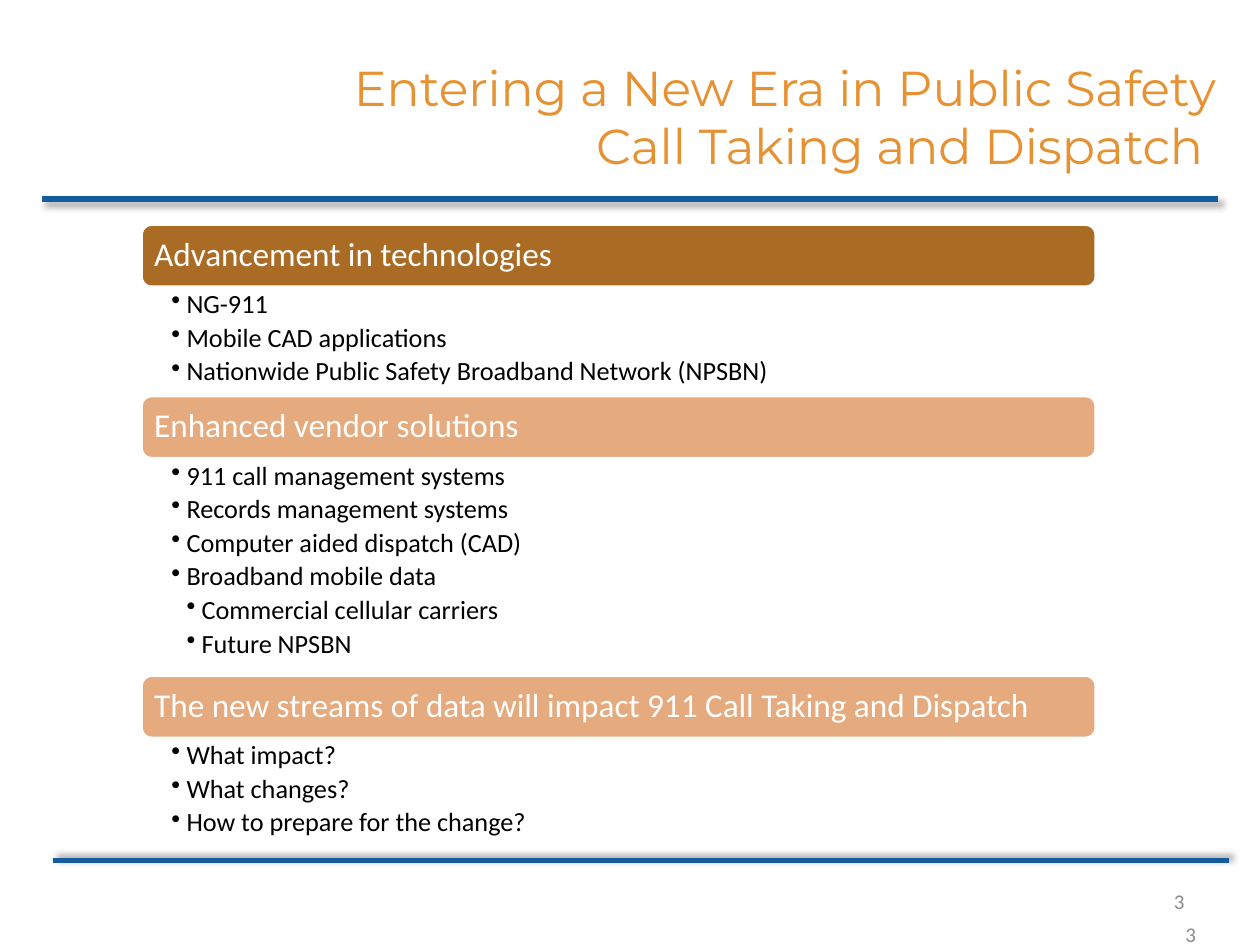
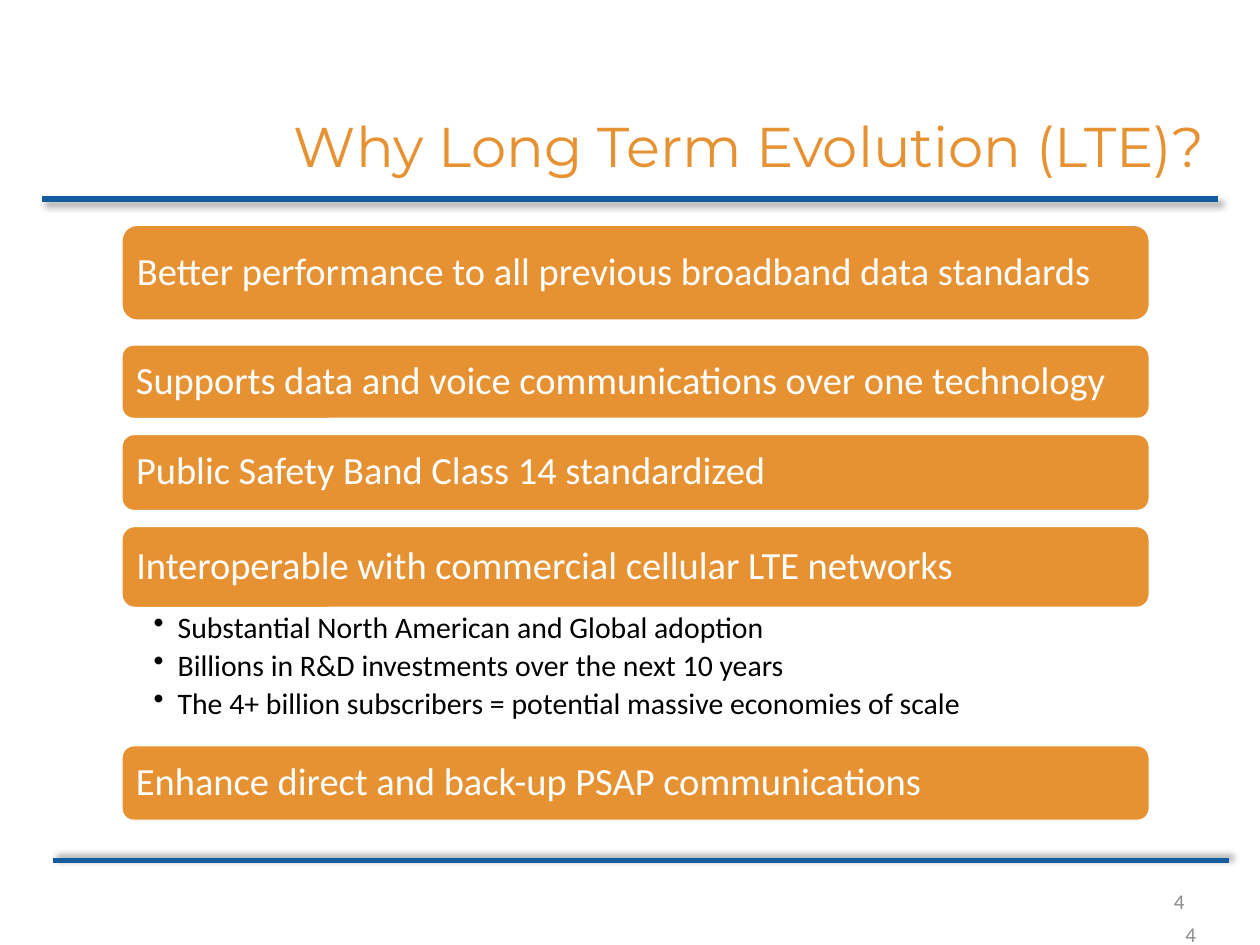
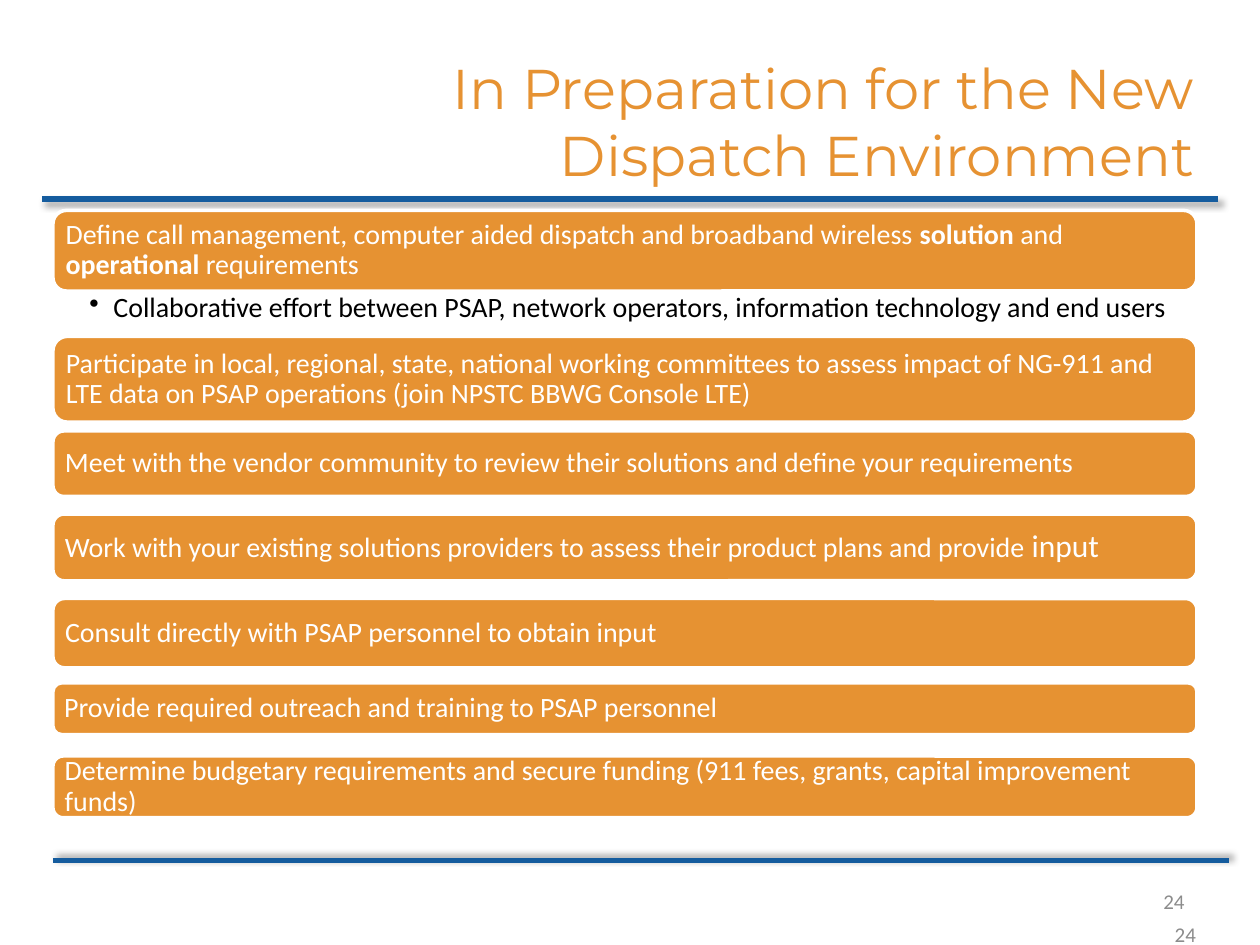
"""Build three slides on new technology in public safety dispatch."""
from lxml import etree
from pptx import Presentation
from pptx.dml.color import RGBColor
from pptx.enum.shapes import MSO_CONNECTOR, MSO_SHAPE
from pptx.enum.text import MSO_ANCHOR, MSO_AUTO_SIZE, PP_ALIGN
from pptx.oxml.ns import qn
from pptx.util import Inches, Pt

STRAIGHT, ROUNDED = MSO_CONNECTOR.STRAIGHT, MSO_SHAPE.ROUNDED_RECTANGLE
TOP, MIDDLE = MSO_ANCHOR.TOP, MSO_ANCHOR.MIDDLE
LEFT, RIGHT = PP_ALIGN.LEFT, PP_ALIGN.RIGHT
NO_FIT = MSO_AUTO_SIZE.NONE
TITLE_ONLY = 5

ORANGE, BROWN, PEACH = "E69232", "AA6C25", "E5AA7E"
BLUE, GRAY, WHITE, BLACK = "155C9E", "8C8C8C", "FFFFFF", "000000"
TITLE_FONT, BODY_FONT = "Montserrat", "Calibri"

RULES = [(9.67, 0.33, 1.58, 45), (9.75, 0.42, 6.83, 315)]
NUMBER_BOXES = [(7.17, 6.95, 2.33, 0.4), (8.67, 7.33, 0.92, 0.17)]
CORNER_INSET = 0.05
BOLD = {"bold": True}

SLIDES = [
    {
        "title": "Entering a New Era in Public Safety Call Taking and Dispatch ",
        "title_box": (2.33, 0.67, 7.42, 0.5), "title_size": 28, "number": "3",
        "left": 1.12, "width": 7.58, "size": 19, "inset": 0.08,
        "bullet_size": 15, "bullet_insets": (0.24, 0.03, 0.15, 0.03),
        "hanging": 0.12, "bullet_row": 0.29,
        "bars": [
            (1.78, 0.5, BROWN, "Advancement in technologies",
             [("NG-911", 1), ("Mobile CAD applications", 1),
              ("Nationwide Public Safety Broadband Network (NPSBN)", 1)]),
            (3.14, 0.5, PEACH, "Enhanced vendor solutions",
             [("911 call management systems", 1),
              ("Records management systems", 1),
              ("Computer aided dispatch (CAD)", 1),
              ("Broadband mobile data", 1),
              ("Commercial cellular carriers", 2),
              ("Future NPSBN", 2)]),
            (5.36, 0.5, PEACH,
             "The new streams of data will impact 911 Call Taking and Dispatch",
             [("What impact?", 1), ("What changes?", 1),
              ("How to prepare for the change?", 1)]),
        ],
    },
    {
        "title": "Why Long Term Evolution (LTE)?",
        "title_box": (1.33, 0.75, 8.33, 0.8), "title_size": 32, "number": "4",
        "left": 0.96, "width": 8.17, "size": 22, "inset": 0.09,
        "bullet_size": 17, "bullet_insets": (0.26, 0.03, 0.17, 0.03),
        "hanging": 0.19, "bullet_row": 0.36,
        "bars": [
            (1.78, 0.77, ORANGE,
             "Better performance to all previous broadband data standards", []),
            (2.73, 0.6, ORANGE,
             "Supports data and voice communications over one technology", []),
            (3.44, 0.62, ORANGE, "Public Safety Band Class 14 standardized", []),
            (4.17, 0.66, ORANGE,
             "Interoperable with commercial cellular LTE networks",
             [("Substantial North American and Global adoption", 1),
              ("Billions in R&D investments over the next 10 years", 1),
              ("The 4+ billion subscribers = potential massive economies of scale", 1)]),
            (5.91, 0.61, ORANGE, "Enhance direct and back-up PSAP communications", []),
        ],
    },
    {
        "title": "In Preparation for the New Dispatch Environment",
        "title_box": (2.08, 0.33, 7.5, 1.25), "title_size": 32, "number": "24",
        "left": 0.42, "width": 9.08, "size": 16, "inset": 0.07,
        "bullet_size": 16, "bullet_insets": (0.29, 0.02, 0.12, 0.02),
        "hanging": 0.19, "bullet_row": 0.54,
        "bars": [
            (1.67, 0.64, ORANGE,
             [("Define call management, computer aided dispatch and broadband wireless ", {}),
              ("solution", BOLD), (" and ", {}),
              ("operational", BOLD), (" requirements", {})],
             [("Collaborative effort between PSAP, network operators, "
               "information technology and end users", 1)]),
            (2.67, 0.68, ORANGE,
             "Participate in local, regional, state, national working committees to assess "
             "impact of NG-911 and LTE data on PSAP operations (join NPSTC BBWG Console LTE)", []),
            (3.42, 0.52, ORANGE,
             "Meet with the vendor community to review their solutions "
             "and define your requirements", []),
            (4.08, 0.53, ORANGE,
             [("Work with your existing solutions providers to assess their "
               "product plans and provide ", {}), ("input", {"size": 18})], []),
            (4.75, 0.55, ORANGE, "Consult directly with PSAP personnel to obtain input", []),
            (5.42, 0.41, ORANGE, "Provide required outreach and training to PSAP personnel", []),
            (6.0, 0.49, ORANGE,
             "Determine budgetary requirements and secure funding "
             "(911 fees, grants, capital improvement funds)", []),
        ],
    },
]


def color(hex_code):
    """Return the colour for a hex string."""
    return RGBColor.from_string(hex_code)


def place(shape, box):
    """Move a shape to a box given in inches."""
    shape.left, shape.top, shape.width, shape.height = map(Inches, box)


def add_bullet(para, level, hanging):
    """Give a paragraph a hanging round bullet."""
    para.level = level
    properties = para._p.get_or_add_pPr()
    properties.set("marL", str(Inches(hanging * level)))
    properties.set("indent", str(-Inches(hanging)))
    etree.SubElement(properties, qn("a:buChar")).set("char", "•")


def write_text(shape, paragraphs, *, size, ink, font=BODY_FONT, align=LEFT, anchor=MIDDLE,
               insets=(0.1, 0.05, 0.1, 0.05), spacing=None, after=None, hanging=None):
    """Fill a shape with (text or spans, level) paragraphs."""
    frame = shape.text_frame
    frame.word_wrap, frame.auto_size, frame.vertical_anchor = True, NO_FIT, anchor
    (frame.margin_left, frame.margin_top,
     frame.margin_right, frame.margin_bottom) = map(Inches, insets)
    for index, (content, level) in enumerate(paragraphs):
        para = frame.add_paragraph() if index else frame.paragraphs[0]
        para.alignment, para.line_spacing, para.space_after = align, spacing, after
        if hanging:
            add_bullet(para, level, hanging)
        for text, changes in [(content, {})] if isinstance(content, str) else content:
            span = para.add_run()
            span.text = text
            span.font.name = font
            span.font.size = Pt(changes.get("size", size))
            span.font.bold = changes.get("bold")
            span.font.color.rgb = color(ink)


def add_rule(page, start, end, height, angle):
    """Draw a blue line with a soft shadow."""
    rule = page.shapes.add_connector(
        STRAIGHT, Inches(start), Inches(height), Inches(end), Inches(height))
    rule.line.color.rgb, rule.line.width = color(BLUE), Pt(3)
    effects = etree.SubElement(rule._element.spPr, qn("a:effectLst"))
    shadow = etree.SubElement(effects, qn("a:outerShdw"), blurRad=str(Pt(4)),
                              dist=str(Pt(3)), dir=str(angle * 60000))
    tint = etree.SubElement(shadow, qn("a:srgbClr"), val=BLACK)
    etree.SubElement(tint, qn("a:alpha"), val="40000")


def add_frame(page, content):
    """Add the title, the two rules and the page numbers."""
    title = page.shapes.title
    place(title, content["title_box"])
    write_text(title, [(content["title"], 0)], size=content["title_size"],
               ink=ORANGE, font=TITLE_FONT, align=RIGHT)
    for rule in RULES:
        add_rule(page, *rule)
    for box in NUMBER_BOXES:
        number = page.shapes.add_textbox(*map(Inches, box))
        write_text(number, [(content["number"], 0)], size=12, ink=GRAY, align=RIGHT)


def add_bar(page, content, top, height, fill, heading, bullets):
    """Add a rounded heading bar and the bullets below it."""
    left, width = content["left"], content["width"]
    bar = page.shapes.add_shape(ROUNDED, *map(Inches, (left, top, width, height)))
    bar.shadow.inherit = False
    bar.fill.solid()
    bar.fill.fore_color.rgb = color(fill)
    bar.line.color.rgb, bar.line.width = color(WHITE), Pt(2)
    # python-pptx insets add to the rounded corner's own text inset
    write_text(bar, [(heading, 0)], size=content["size"], ink=WHITE, spacing=0.9,
               insets=(content["inset"],) * 4)
    if bullets:
        box = (left, top + height, width, content["bullet_row"] * len(bullets))
        size = content["bullet_size"]
        write_text(page.shapes.add_textbox(*map(Inches, box)), bullets, size=size,
                   ink=BLACK, anchor=TOP, insets=content["bullet_insets"], spacing=0.9,
                   after=Pt(size * 0.2), hanging=content["hanging"])


def main():
    """Build and save the deck."""
    deck = Presentation()
    deck.slide_width, deck.slide_height = Inches(10), Inches(7.5)
    for content in SLIDES:
        page = deck.slides.add_slide(deck.slide_layouts[TITLE_ONLY])
        add_frame(page, content)
        for bar in content["bars"]:
            add_bar(page, content, *bar)
    deck.save("out.pptx")


if __name__ == "__main__":
    main()
